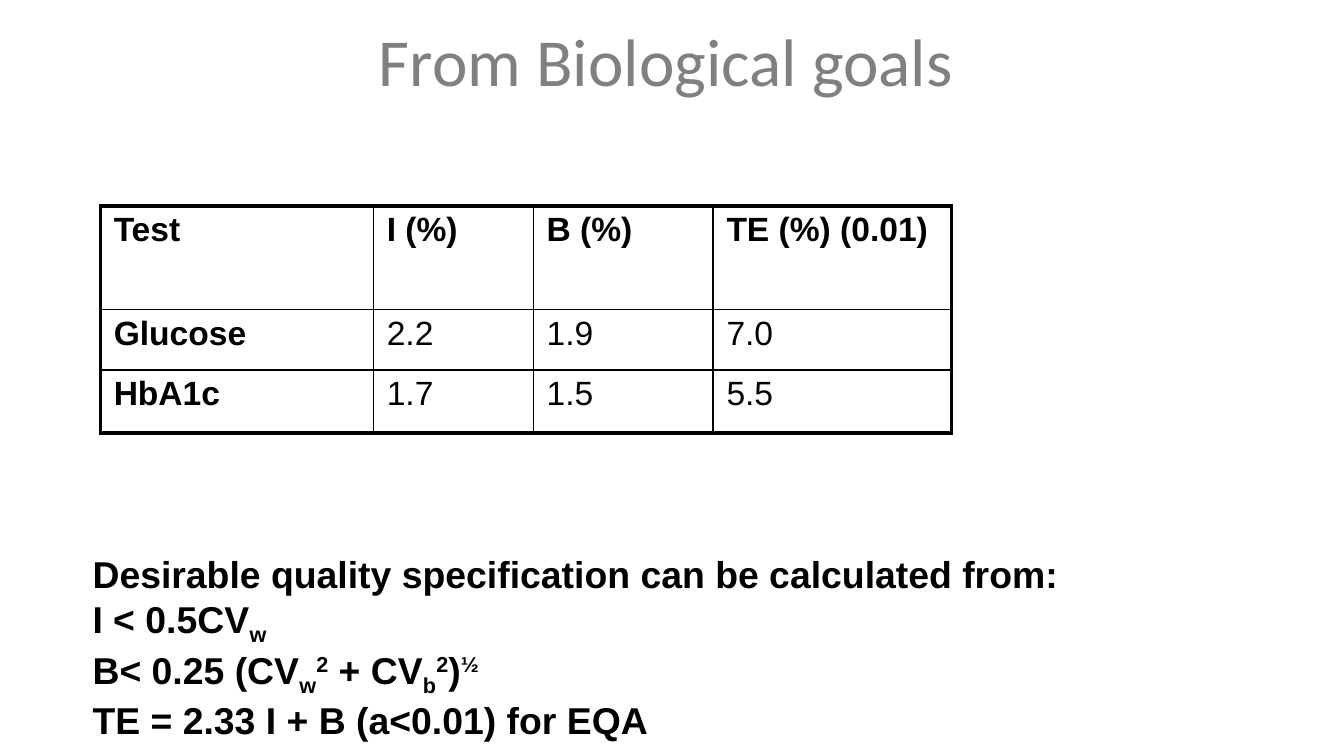
from dataclasses import dataclass

from lxml import etree
from pptx import Presentation
from pptx.dml.color import RGBColor
from pptx.enum.text import MSO_ANCHOR, MSO_AUTO_SIZE, PP_ALIGN
from pptx.oxml.ns import qn
from pptx.util import Cm, Pt

CENTER, LEFT = PP_ALIGN.CENTER, PP_ALIGN.LEFT
MIDDLE, TOP = MSO_ANCHOR.MIDDLE, MSO_ANCHOR.TOP
NO_FIT = MSO_AUTO_SIZE.NONE
COLORS = {"title": "808080", "text": "000000", "line": "000000"}
THIN, THICK = 1, 2.25
SUB, SUP = -25, 30


@dataclass
class Box:
    left: float
    top: float
    width: float
    height: float

    def place(self) -> tuple:
        return Cm(self.left), Cm(self.top), Cm(self.width), Cm(self.height)


@dataclass
class Part:
    text: str
    shift: int = 0


def write(frame, lines: list, *, size: float, font: str = "Arial",
          color: str = "text", bold: bool = False, align=LEFT) -> None:
    """Fill a text frame; each line is a list of parts."""
    for i, line in enumerate(lines):
        para = frame.paragraphs[0] if i == 0 else frame.add_paragraph()
        para.alignment = align
        for part in line:
            run = para.add_run()
            run.text = part.text
            run.font.name, run.font.size, run.font.bold = font, Pt(size), bold
            run.font.color.rgb = RGBColor.from_string(COLORS[color])
            if part.shift:
                run.font._element.set("baseline", str(part.shift * 1000))


def edge(cell, side: str, width: float) -> None:
    """Add one border line to a cell."""
    props = cell._tc.get_or_add_tcPr()
    line = etree.SubElement(props, qn(f"a:ln{side}"), w=str(Pt(width)))
    fill = etree.SubElement(line, qn("a:solidFill"))
    etree.SubElement(fill, qn("a:srgbClr"), val=COLORS["line"])


def draw_table(slide, box: Box, data: list, cols: list, rows: list) -> None:
    """Draw a grid with thin inner lines and a thick frame."""
    table = slide.shapes.add_table(len(rows), len(cols), *box.place()).table
    table.first_row = table.horz_banding = False
    for col, width in zip(table.columns, cols):
        col.width = Cm(width)
    for row, height in zip(table.rows, rows):
        row.height = Cm(height)
    for r, texts in enumerate(data):
        for c, text in enumerate(texts):
            cell = table.cell(r, c)
            cell.margin_left = cell.margin_right = Cm(0.25)
            cell.margin_top = cell.margin_bottom = Cm(0.1)
            cell.vertical_anchor = TOP
            outer = {"L": c == 0, "R": c == len(cols) - 1,
                     "T": r == 0, "B": r == len(rows) - 1}
            for side, thick in outer.items():
                edge(cell, side, THICK if thick else THIN)
            cell.fill.background()
            write(cell.text_frame, [[Part(text)]], size=18,
                  bold=r == 0 or c == 0)


def draw_title(slide, box: Box, text: str) -> None:
    title = slide.shapes.title
    title.left, title.top, title.width, title.height = box.place()
    frame = title.text_frame
    frame.auto_size, frame.vertical_anchor = NO_FIT, MIDDLE
    write(frame, [[Part(text)]], size=36, font="Calibri", color="title",
          align=CENTER)


def draw_text(slide, box: Box, lines: list) -> None:
    frame = slide.shapes.add_textbox(*box.place()).text_frame
    frame.word_wrap = True
    write(frame, lines, size=20, bold=True)


DATA = [
    ["Test", "I (%)", "B (%)", "TE (%) (0.01)"],
    ["Glucose", "2.2", "1.9", "7.0"],
    ["HbA1c", "1.7", "1.5", "5.5"],
]
COLS = [5.16, 3.02, 3.4, 4.5]
ROWS = [1.96, 1.14, 1.19]
RULES = [
    [Part("Desirable quality specification can be calculated from:")],
    [Part("I < 0.5CV"), Part("w", SUB)],
    [Part("B< 0.25 (CV"), Part("w", SUB), Part("2", SUP), Part(" + CV"),
     Part("b", SUB), Part("2", SUP), Part(")"), Part("½", SUP)],
    [Part("TE = 2.33 I + B (a<0.01) for EQA")],
]


def main() -> None:
    deck = Presentation()
    deck.slide_width, deck.slide_height = Cm(25.4), Cm(14.29)
    slide = deck.slides.add_slide(deck.slide_layouts[5])

    # Title
    draw_title(slide, Box(1.3, 0.38, 22.86, 1.5), "From Biological goals ")

    # Table of goals
    draw_table(slide, Box(1.9, 3.89, sum(COLS), sum(ROWS)), DATA, COLS, ROWS)

    # Formulas
    draw_text(slide, Box(1.5, 10.29, 19, 3.68), RULES)

    deck.save("out.pptx")


if __name__ == "__main__":
    main()
